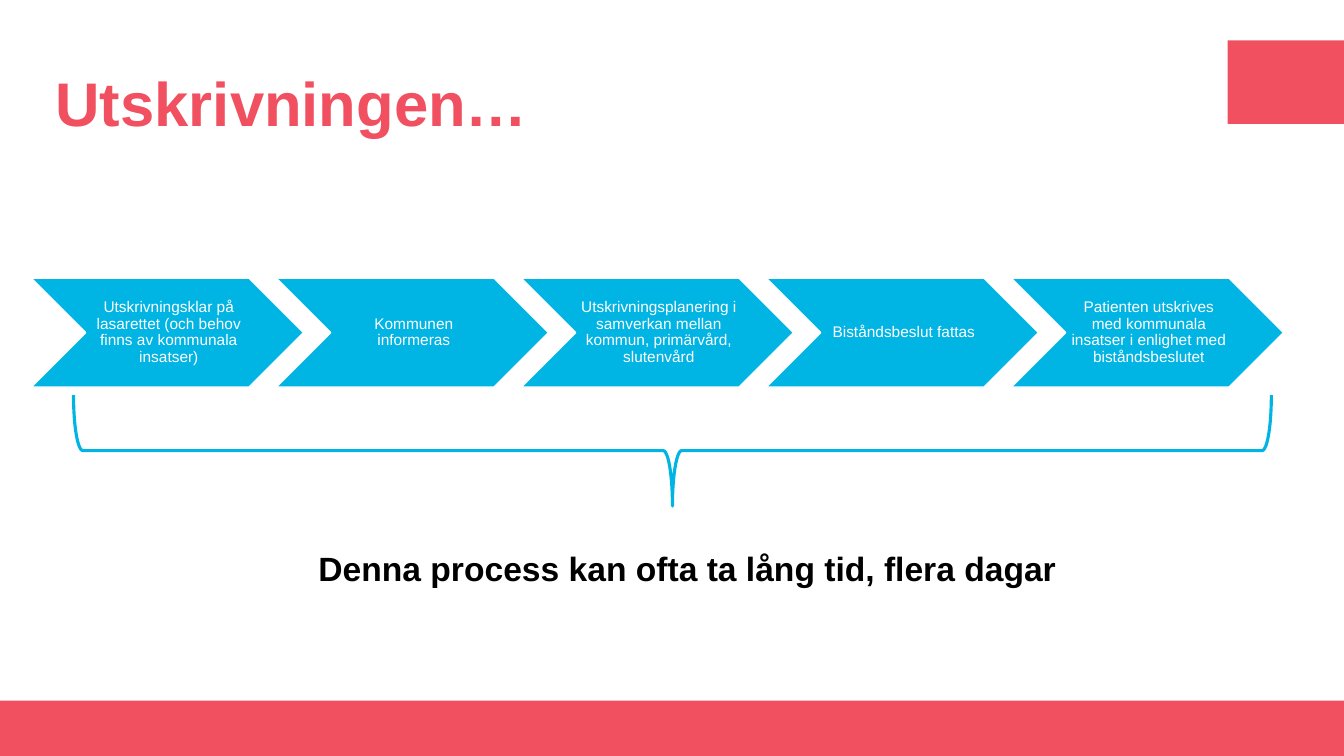
from dataclasses import dataclass

import pptx
import pptx.dml.color
import pptx.enum.shapes
import pptx.enum.text
import pptx.util

RGBColor = pptx.dml.color.RGBColor
MSO_SHAPE = pptx.enum.shapes.MSO_SHAPE
PP_ALIGN = pptx.enum.text.PP_ALIGN
MSO_ANCHOR = pptx.enum.text.MSO_ANCHOR
MSO_AUTO_SIZE = pptx.enum.text.MSO_AUTO_SIZE

CORAL = RGBColor(0xF1, 0x50, 0x60)
BLUE = RGBColor(0x00, 0xB4, 0xE4)
WHITE = RGBColor(0xFF, 0xFF, 0xFF)
BLACK = RGBColor(0x00, 0x00, 0x00)
FONT = "Arial"
SLIDE_WIDTH = pptx.util.Inches(13.33)
SLIDE_HEIGHT = pptx.util.Inches(7.5)


@dataclass(frozen=True)
class Area:
    """Position and size in percent of the slide's width and height."""

    left: float
    top: float
    width: float
    height: float

    def lengths(self) -> tuple[int, int, int, int]:
        return (
            round(SLIDE_WIDTH * self.left / 100),
            round(SLIDE_HEIGHT * self.top / 100),
            round(SLIDE_WIDTH * self.width / 100),
            round(SLIDE_HEIGHT * self.height / 100),
        )


@dataclass(frozen=True)
class TextStyle:
    size: float
    color: RGBColor
    bold: bool = False
    alignment: PP_ALIGN = PP_ALIGN.LEFT
    line_spacing: float = 1.0


BANDS = (Area(0, 92.67, 100, 7.33), Area(91.35, 5.33, 8.65, 11.07))
TITLE_AREA = Area(3.38, 5.33, 87.1, 17.6)
CAPTION_AREA = Area(22.96, 71.87, 57.54, 6.67)
BRACE_AREA = Area(45.91, -19.6, 8.25, 158.4)
FIRST_STEP = Area(2.33, 36.8, 20.25, 14.4)
STEP_PITCH = 18.23
STEPS = (
    "Utskrivningsklar på lasarettet (och behov finns av kommunala insatser)",
    "Kommunen informeras",
    "Utskrivningsplanering i samverkan mellan kommun, primärvård, slutenvård",
    "Biståndsbeslut fattas",
    "Patienten utskrives med kommunala insatser i enlighet med biståndsbeslutet",
)
TITLE_STYLE = TextStyle(44, CORAL, bold=True, line_spacing=0.9)
STEP_STYLE = TextStyle(11, WHITE, alignment=PP_ALIGN.CENTER, line_spacing=0.9)
CAPTION_STYLE = TextStyle(24, BLACK, bold=True)


def write(text_frame: pptx.text.text.TextFrame, text: str, style: TextStyle) -> None:
    text_frame.word_wrap = True
    paragraph = text_frame.paragraphs[0]
    paragraph.alignment = style.alignment
    paragraph.line_spacing = style.line_spacing
    run = paragraph.add_run()
    run.text = text
    run.font.name = FONT
    run.font.size = pptx.util.Pt(style.size)
    run.font.bold = style.bold
    run.font.color.rgb = style.color


def add_band(slide: pptx.slide.Slide, area: Area) -> None:
    band = slide.shapes.add_shape(MSO_SHAPE.RECTANGLE, *area.lengths())
    band.shadow.inherit = False
    band.fill.solid()
    band.fill.fore_color.rgb = CORAL
    band.line.fill.background()


def add_step(slide: pptx.slide.Slide, area: Area, text: str) -> None:
    chevron = slide.shapes.add_shape(MSO_SHAPE.CHEVRON, *area.lengths())
    chevron.shadow.inherit = False
    chevron.fill.solid()
    chevron.fill.fore_color.rgb = BLUE
    chevron.line.color.rgb = WHITE
    chevron.line.width = pptx.util.Pt(1)
    text_frame = chevron.text_frame
    text_frame.margin_left = pptx.util.Inches(0.05)
    text_frame.margin_right = pptx.util.Inches(0.02)
    text_frame.margin_top = text_frame.margin_bottom = pptx.util.Inches(0.02)
    text_frame.vertical_anchor = MSO_ANCHOR.MIDDLE
    write(text_frame, text, STEP_STYLE)


def add_brace(slide: pptx.slide.Slide, area: Area) -> None:
    brace = slide.shapes.add_shape(MSO_SHAPE.LEFT_BRACE, *area.lengths())
    brace.rotation = 270
    brace.shadow.inherit = False
    brace.fill.background()
    brace.line.color.rgb = BLUE
    brace.line.width = pptx.util.Pt(2.25)


def add_caption(slide: pptx.slide.Slide, area: Area, text: str) -> None:
    caption = slide.shapes.add_textbox(*area.lengths())
    caption.text_frame.auto_size = MSO_AUTO_SIZE.SHAPE_TO_FIT_TEXT
    write(caption.text_frame, text, CAPTION_STYLE)


def set_title(slide: pptx.slide.Slide, area: Area, text: str) -> None:
    title = slide.shapes.title
    title.left, title.top, title.width, title.height = area.lengths()
    title.text_frame.auto_size = MSO_AUTO_SIZE.NONE
    title.text_frame.vertical_anchor = MSO_ANCHOR.MIDDLE
    write(title.text_frame, text, TITLE_STYLE)


def main() -> None:
    presentation = pptx.Presentation()
    presentation.slide_width = SLIDE_WIDTH
    presentation.slide_height = SLIDE_HEIGHT
    title_only = presentation.slide_layouts.get_by_name("Title Only")
    slide = presentation.slides.add_slide(title_only)

    set_title(slide, TITLE_AREA, "Utskrivningen…")
    for area in BANDS:
        add_band(slide, area)
    for index, text in enumerate(STEPS):
        left = FIRST_STEP.left + index * STEP_PITCH
        area = Area(left, FIRST_STEP.top, FIRST_STEP.width, FIRST_STEP.height)
        add_step(slide, area, text)
    add_brace(slide, BRACE_AREA)
    add_caption(slide, CAPTION_AREA, "Denna process kan ofta ta lång tid, flera dagar")

    presentation.save("out.pptx")


if __name__ == "__main__":
    main()
